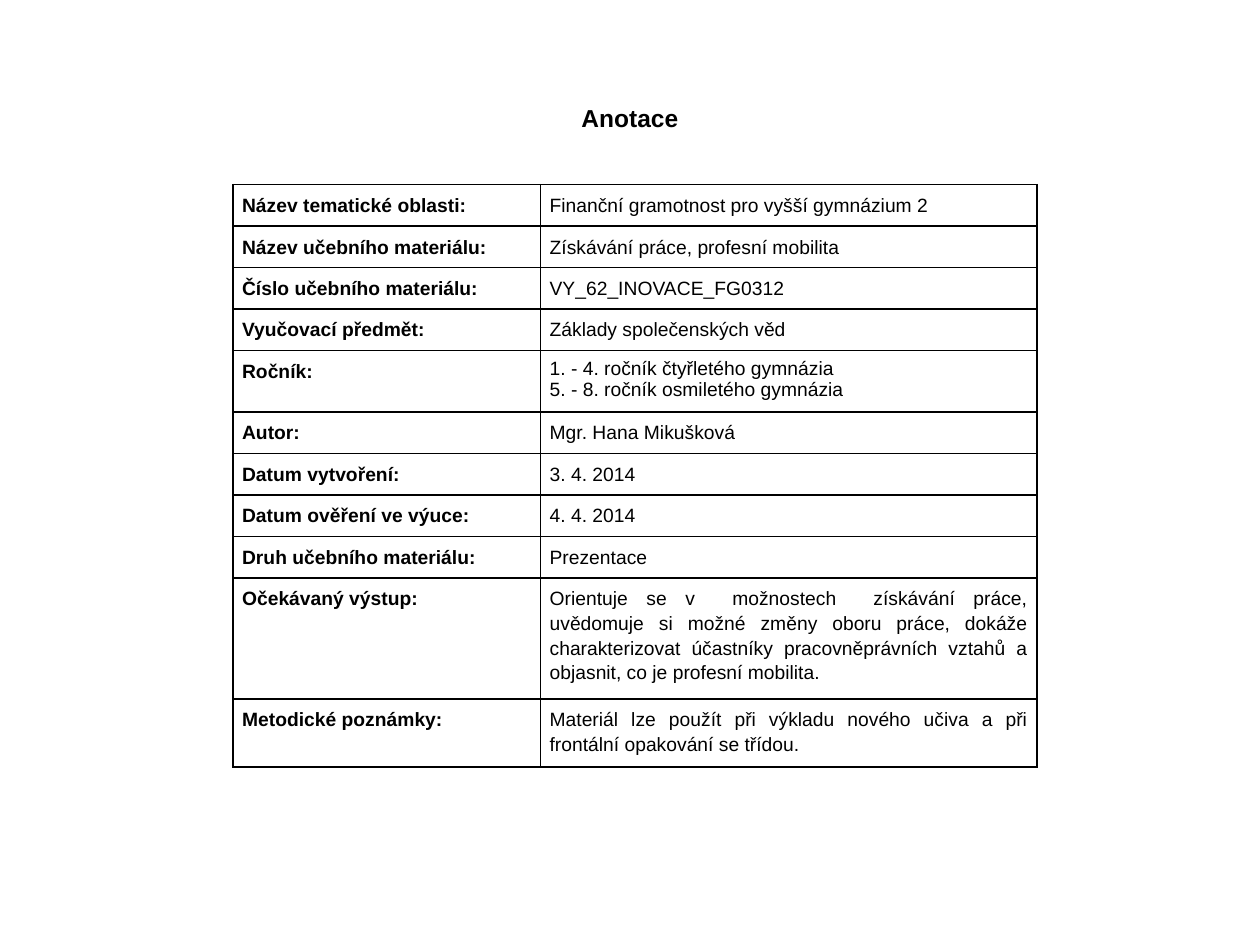
from dataclasses import dataclass

import pptx
import pptx.dml.color
import pptx.enum.text
import pptx.oxml
import pptx.oxml.ns
import pptx.util

Cm = pptx.util.Cm
Align = pptx.enum.text.PP_ALIGN

COLORS = {"text": "000000", "border": "000000"}
FONT = "Arial"
LINE_SPACING = 1.15
COLUMN_WIDTHS = (6.2, 10)
ROW_HEIGHT = 0.83


@dataclass(frozen=True)
class Entry:
    label: str
    lines: tuple[str, ...]
    height: float = ROW_HEIGHT
    justified_label: bool = False


ENTRIES = (
    Entry("Název tematické oblasti:", ("Finanční gramotnost pro vyšší gymnázium 2",)),
    Entry("Název učebního materiálu:", ("Získávání práce, profesní mobilita",)),
    Entry("Číslo učebního materiálu:", ("VY_62_INOVACE_FG0312",)),
    Entry("Vyučovací předmět:", ("Základy společenských věd",)),
    Entry(
        "Ročník:",
        ("1. - 4. ročník čtyřletého gymnázia", "5. - 8. ročník osmiletého gymnázia"),
        height=1.24,
    ),
    Entry("Autor:", ("Mgr. Hana Mikušková",)),
    Entry("Datum vytvoření:", ("3. 4. 2014",)),
    Entry("Datum ověření ve výuce:", ("4. 4. 2014",)),
    Entry("Druh učebního materiálu:", ("Prezentace",), justified_label=True),
    Entry(
        "Očekávaný výstup:",
        (
            "Orientuje se v  možnostech  získávání práce, uvědomuje si možné změny "
            "oboru práce, dokáže charakterizovat účastníky pracovněprávních vztahů "
            "a objasnit, co je profesní mobilita.",
        ),
        height=2.44,
        justified_label=True,
    ),
    Entry(
        "Metodické poznámky:",
        (
            "Materiál lze použít při výkladu nového učiva a při frontální opakování "
            "se třídou.",
        ),
        height=1.37,
        justified_label=True,
    ),
)


def style_paragraph(para, size: float, bold: bool, align) -> None:
    para.alignment = align
    para.font.name = FONT
    para.font.size = pptx.util.Pt(size)
    para.font.bold = bold
    para.font.color.rgb = pptx.dml.color.RGBColor.from_string(COLORS["text"])


def add_borders(cell) -> None:
    properties = cell._tc.get_or_add_tcPr()
    for side in ("lnL", "lnR", "lnT", "lnB"):
        properties.append(
            pptx.oxml.parse_xml(
                f'<a:{side} {pptx.oxml.ns.nsdecls("a")} w="{pptx.util.Pt(1)}">'
                f'<a:solidFill><a:srgbClr val="{COLORS["border"]}"/></a:solidFill>'
                f"</a:{side}>"
            )
        )


def fill_cell(cell, lines: tuple[str, ...], bold: bool, justified: bool) -> None:
    cell.margin_left = cell.margin_right = Cm(0.18)
    cell.margin_top = cell.margin_bottom = Cm(0.15)
    add_borders(cell)
    cell.fill.background()
    cell.text = "\n".join(lines)
    for para in cell.text_frame.paragraphs:
        style_paragraph(para, 11, bold, Align.JUSTIFY if justified else Align.LEFT)
        if len(lines) == 1:
            para.line_spacing = LINE_SPACING


def add_title(page, text: str, width: int) -> None:
    box = page.shapes.add_textbox(0, Cm(1.73), width, Cm(1.27))
    frame = box.text_frame
    frame.word_wrap = True
    frame.vertical_anchor = pptx.enum.text.MSO_ANCHOR.MIDDLE
    frame.text = text
    style_paragraph(frame.paragraphs[0], 14, True, Align.CENTER)


def add_annotation_table(page, entries: tuple[Entry, ...]) -> None:
    table = page.shapes.add_table(
        len(entries),
        len(COLUMN_WIDTHS),
        Cm(4.7),
        Cm(3.72),
        Cm(sum(COLUMN_WIDTHS)),
        Cm(sum(entry.height for entry in entries)),
    ).table
    table.first_row = False
    table.horz_banding = False
    for column, width in zip(table.columns, COLUMN_WIDTHS):
        column.width = Cm(width)
    for index, entry in enumerate(entries):
        table.rows[index].height = Cm(entry.height)
        fill_cell(table.cell(index, 0), (entry.label,), True, entry.justified_label)
        fill_cell(table.cell(index, 1), entry.lines, False, len(entry.lines) == 1)


def main() -> None:
    deck = pptx.Presentation()
    deck.slide_width, deck.slide_height = Cm(25.4), Cm(19.05)
    page = deck.slides.add_slide(deck.slide_layouts[6])
    add_title(page, "Anotace", deck.slide_width)
    add_annotation_table(page, ENTRIES)
    deck.save("out.pptx")


if __name__ == "__main__":
    main()
